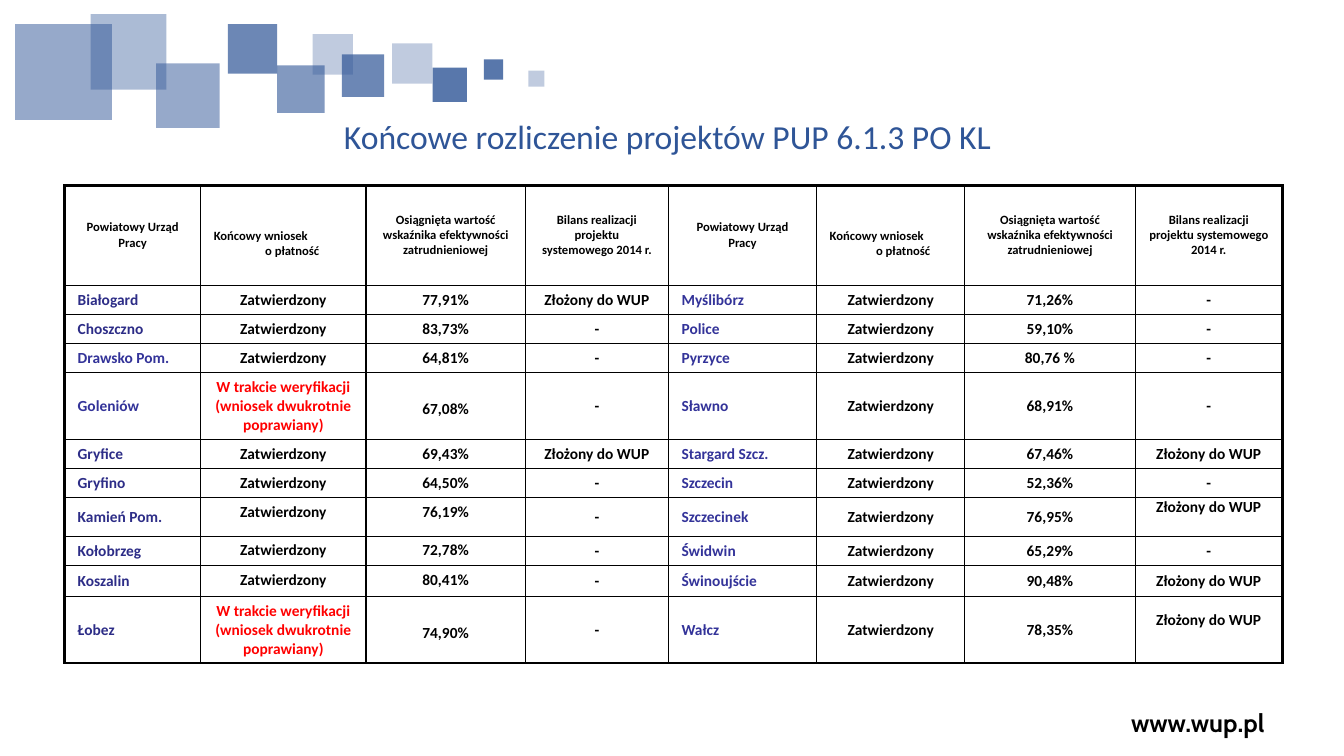
import pptx
import pptx.util
import pptx.dml.color
import pptx.enum.shapes
import pptx.enum.text
import lxml.etree
from pptx.oxml.ns import qn

Inches = pptx.util.Inches
Pt = pptx.util.Pt
ALIGN = pptx.enum.text.PP_ALIGN
ANCHOR = pptx.enum.text.MSO_ANCHOR

# Content
TITLE = "Końcowe rozliczenie projektów PUP 6.1.3 PO KL"
FOOTER = "www.wup.pl"
HEADERS = [
    "Powiatowy Urząd Pracy",
    "Końcowy wniosek\no płatność",
    "Osiągnięta wartość wskaźnika efektywności zatrudnieniowej",
    "Bilans realizacji projektu systemowego 2014 r.",
]
OK = "Zatwierdzony"
CHECK = "W trakcie weryfikacji (wniosek dwukrotnie poprawiany)"
FILED = "Złożony do WUP"
OFFICES = [
    ("Białogard", OK, "77,91%", FILED, "Myślibórz", OK, "71,26%", "-"),
    ("Choszczno", OK, "83,73%", "-", "Police", OK, "59,10%", "-"),
    ("Drawsko Pom.", OK, "64,81%", "-", "Pyrzyce", OK, "80,76 %", "-"),
    ("Goleniów", CHECK, "67,08%", "-", "Sławno", OK, "68,91%", "-"),
    ("Gryfice", OK, "69,43%", FILED, "Stargard Szcz.", OK, "67,46%", FILED),
    ("Gryfino", OK, "64,50%", "-", "Szczecin", OK, "52,36%", "-"),
    ("Kamień Pom.", OK, "76,19%", "-", "Szczecinek", OK, "76,95%", FILED),
    ("Kołobrzeg", OK, "72,78%", "-", "Świdwin", OK, "65,29%", "-"),
    ("Koszalin", OK, "80,41%", "-", "Świnoujście", OK, "90,48%", FILED),
    ("Łobez", CHECK, "74,90%", "-", "Wałcz", OK, "78,35%", FILED),
]

# Layout, in inches
COLUMN_WIDTHS = [1.35, 1.64, 1.58, 1.42, 1.47, 1.47, 1.69, 1.46]
ROW_HEIGHTS = [0.99, 0.29, 0.29, 0.29, 0.66, 0.29, 0.29, 0.38, 0.29, 0.31, 0.66]
SECOND_LINE_INDENTS = {1: 0.51, 5: 0.46}
LIGHTER_NAMES = {"Drawsko Pom.", "Goleniów"}
RAISED_CELLS = {(7, 7), (10, 7)}
SQUARES = [  # left, top, width, height, opacity in percent
    (3.89, 0.43, 0.4, 0.4, 30), (4.29, 0.67, 0.34, 0.34, 80),
    (3.39, 0.54, 0.42, 0.42, 70), (0.15, 0.24, 0.96, 0.95, 50),
    (2.75, 0.65, 0.47, 0.47, 60), (1.55, 0.63, 0.63, 0.64, 50),
    (0.9, 0.14, 0.75, 0.75, 40), (4.8, 0.59, 0.19, 0.2, 80),
    (2.26, 0.24, 0.49, 0.49, 70), (3.1, 0.34, 0.4, 0.4, 30),
    (5.24, 0.7, 0.16, 0.16, 30),
]
THEME = {
    "blue": "2F5597", "black": "000000", "red": "FF0000",
    "left_name": "2D2D87", "right_name": "333399",
    "body_font": "Calibri", "footer_font": "Cabin",
    "title": 24, "footer": 18, "header": 9, "body": 11,
    "outer_line": 2.25, "inner_line": 1,
}


def set_values(target, values):
    for name, value in values.items():
        setattr(target, name, value)


def color(name):
    return pptx.dml.color.RGBColor.from_string(THEME[name])


def write(frame, text, size, color_name, font="body_font", bold=True,
          **paragraph_format):
    frame.text = text
    for paragraph in frame.paragraphs:
        set_values(paragraph, paragraph_format)
        for run in paragraph.runs:
            set_values(run.font, {"size": Pt(THEME[size]), "bold": bold,
                                  "name": THEME[font]})
            run.font.color.rgb = color(color_name)


def add_text(slide, box, margins, anchor, *args, **kwargs):
    frame = slide.shapes.add_textbox(*map(Inches, box)).text_frame
    set_values(frame, {"word_wrap": True, "vertical_anchor": anchor})
    set_margins(frame, *margins)
    write(frame, *args, **kwargs)


def set_margins(target, left, top, right, bottom):
    set_values(target, {"margin_left": Inches(left), "margin_top": Inches(top),
                        "margin_right": Inches(right), "margin_bottom": Inches(bottom)})


def add_borders(cell, row, column):
    outer_sides = {"lnL": column == 0, "lnR": column == len(COLUMN_WIDTHS) - 1,
                   "lnT": row == 0, "lnB": row == len(ROW_HEIGHTS) - 1}
    properties = cell._tc.get_or_add_tcPr()
    for side, is_outer in outer_sides.items():
        width = THEME["outer_line" if is_outer else "inner_line"]
        line = lxml.etree.SubElement(properties, qn(f"a:{side}"), w=str(Pt(width)))
        fill = lxml.etree.SubElement(line, qn("a:solidFill"))
        lxml.etree.SubElement(fill, qn("a:srgbClr"), val=THEME["black"])


def add_square(slide, left, top, width, height, opacity):
    square = slide.shapes.add_shape(pptx.enum.shapes.MSO_SHAPE.RECTANGLE,
                                    *map(Inches, (left, top, width, height)))
    square.shadow.inherit = False
    square.line.fill.background()
    square.fill.solid()
    square.fill.fore_color.rgb = color("blue")
    tint = square._element.spPr.find(".//" + qn("a:srgbClr"))
    lxml.etree.SubElement(tint, qn("a:alpha"), val=str(opacity * 1000))


def fill_header(cell, column, text):
    two_part = column in SECOND_LINE_INDENTS
    set_margins(cell, 0.13, 0.21 if two_part else 0.05, 0.13, 0.05)
    cell.vertical_anchor = ANCHOR.MIDDLE
    write(cell.text_frame, text, "header", "black",
          alignment=ALIGN.LEFT if two_part else ALIGN.CENTER)
    if two_part:
        properties = cell.text_frame.paragraphs[1]._p.get_or_add_pPr()
        properties.set("marL", str(Inches(SECOND_LINE_INDENTS[column])))


def fill_body(cell, row, column, text, status):
    is_name = column % 4 == 0
    side = 0 if column % 4 == 3 else 0.13
    edge = 0 if column % 4 == 3 else 0.05
    # Percentages next to a long status sit one line lower
    top = 0.27 if column == 2 and status == CHECK else edge
    bottom = 0.19 if (row, column) in RAISED_CELLS else edge
    set_margins(cell, side, top, side, bottom)
    cell.vertical_anchor = ANCHOR.TOP if column in (1, 2) else ANCHOR.MIDDLE
    color_name = "red" if text == CHECK else "black"
    if is_name:
        dark = column == 0 and text not in LIGHTER_NAMES
        color_name = "left_name" if dark else "right_name"
    write(cell.text_frame, text, "body", color_name,
          alignment=ALIGN.LEFT if is_name else ALIGN.CENTER)


def add_offices_table(slide):
    rows = [HEADERS * 2] + OFFICES
    table = slide.shapes.add_table(
        len(rows), len(COLUMN_WIDTHS), Inches(0.64), Inches(1.84),
        Inches(sum(COLUMN_WIDTHS)), Inches(sum(ROW_HEIGHTS))).table
    set_values(table, {"first_row": False, "horz_banding": False})
    for column, width in zip(table.columns, COLUMN_WIDTHS):
        column.width = Inches(width)
    for row, height in zip(table.rows, ROW_HEIGHTS):
        row.height = Inches(height)
    for row, texts in enumerate(rows):
        for column, text in enumerate(texts):
            cell = table.cell(row, column)
            add_borders(cell, row, column)
            cell.fill.background()
            if row == 0:
                fill_header(cell, column, text)
            else:
                fill_body(cell, row, column, text, texts[1])


def main():
    presentation = pptx.Presentation()
    set_values(presentation, {"slide_width": Inches(13.33),
                              "slide_height": Inches(7.5)})
    slide = presentation.slides.add_slide(presentation.slide_layouts[6])

    # Footer and decoration
    add_text(slide, (10.38, 6.97, 3, 0.4), (0.1, 0.05, 0.1, 0.05), ANCHOR.MIDDLE,
             FOOTER, "footer", "black", "footer_font", alignment=ALIGN.CENTER)
    for square in SQUARES:
        add_square(slide, *square)

    # Title and table
    add_text(slide, (0.58, 1.12, 12.08, 0.72), (0.13, 0.07, 0.13, 0.07), ANCHOR.TOP,
             TITLE, "title", "blue", bold=False,
             alignment=ALIGN.CENTER, line_spacing=0.9)
    add_offices_table(slide)
    presentation.save("out.pptx")


if __name__ == "__main__":
    main()
